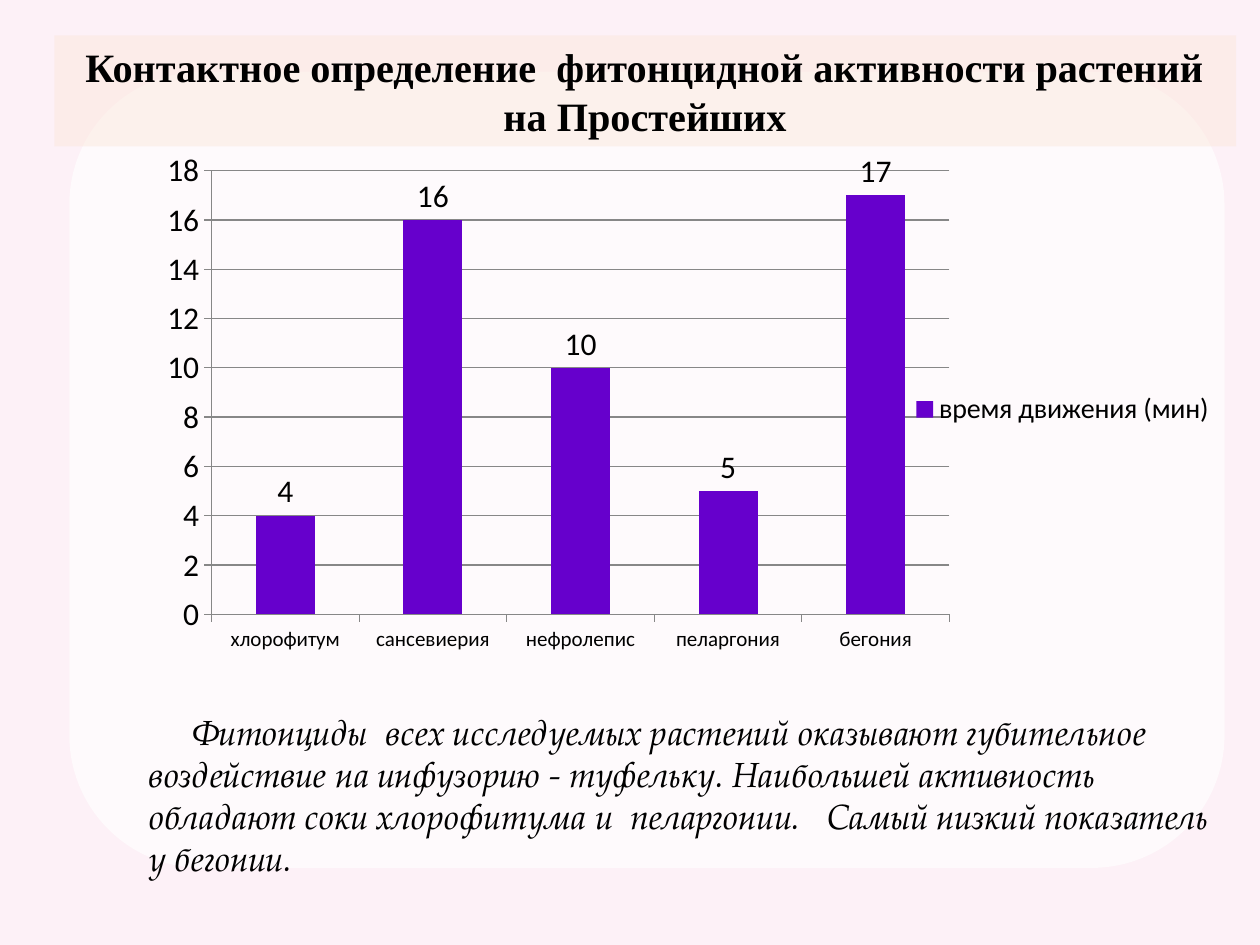
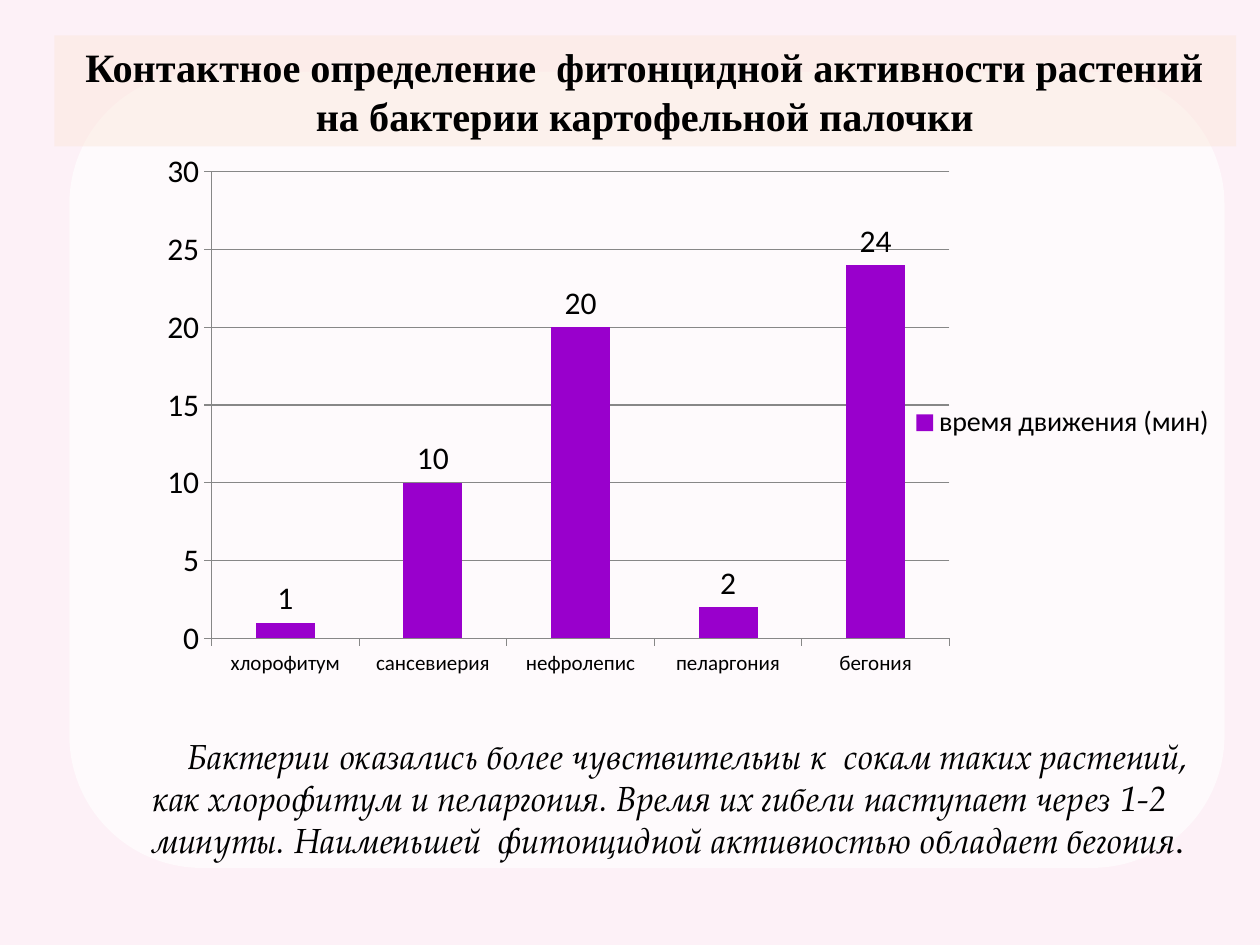
from dataclasses import dataclass

from lxml.etree import SubElement
from pptx import Presentation
from pptx.chart.data import CategoryChartData
from pptx.dml.color import RGBColor
from pptx.enum.chart import (XL_CHART_TYPE, XL_LABEL_POSITION,
                             XL_LEGEND_POSITION, XL_TICK_MARK)
from pptx.enum.shapes import MSO_SHAPE
from pptx.enum.text import MSO_ANCHOR, PP_ALIGN
from pptx.oxml import parse_xml
from pptx.oxml.ns import nsdecls, qn
from pptx.util import Pt


@dataclass(frozen=True)
class Theme:
    # Colours
    background: str = "FDF1F7"
    panel: str = "FFFFFF"
    title_band: str = "FBE5D6"
    ink: str = "000000"
    grid: str = "878787"
    # Fonts
    title_font: str = "Times New Roman"
    chart_font: str = "Calibri"
    conclusion_font: str = "TeX Gyre Pagella"
    # Type sizes
    title_size: int = 23
    conclusion_size: int = 20
    chart_size: int = 18
    legend_size: int = 16
    category_size: int = 12


PLANTS = ("хлорофитум", "сансевиерия", "нефролепис", "пеларгония", "бегония")
MEASURE = "время движения (мин)"
TITLE_START = "Контактное определение  фитонцидной активности растений"
PLOT_AREA = {"x": 0.067, "y": 0.04, "w": 0.677, "h": 0.855}


class Deck:
    def __init__(self, theme):
        self.theme = theme
        self.presentation = Presentation()
        self.presentation.slide_width = Pt(720)
        self.presentation.slide_height = Pt(540)
        self.slide = None

    def style(self, font, name, size, bold=False, italic=False):
        font.name, font.size = name, Pt(size)
        font.bold, font.italic = bold, italic
        font.color.rgb = RGBColor.from_string(self.theme.ink)

    def add_slide(self):
        blank = self.presentation.slide_layouts[6]
        self.slide = self.presentation.slides.add_slide(blank)
        fill = self.slide.background.fill
        fill.solid()
        fill.fore_color.rgb = RGBColor.from_string(self.theme.background)
        self.add_band(MSO_SHAPE.ROUNDED_RECTANGLE, (39.6, 41, 660.2, 455),
                      self.theme.panel, 65)

    def add_band(self, outline, box, colour, opacity):
        band = self.slide.shapes.add_shape(outline, *map(Pt, box))
        band.shadow.inherit = False
        band.line.fill.background()
        band.fill.solid()
        band.fill.fore_color.rgb = RGBColor.from_string(colour)
        tint = band.fill._xPr.find(qn("a:solidFill"))[0]
        SubElement(tint, qn("a:alpha")).set("val", str(opacity * 1000))
        return band

    def add_title(self, ending):
        band = self.add_band(MSO_SHAPE.RECTANGLE, (31, 20.2, 675.4, 63.4),
                             self.theme.title_band, 40)
        frame = band.text_frame
        frame.word_wrap = True
        frame.vertical_anchor = MSO_ANCHOR.MIDDLE
        frame.text = f"{TITLE_START}\n{ending}"
        for line in frame.paragraphs:
            line.alignment = PP_ALIGN.CENTER
            self.style(line.runs[0].font, self.theme.title_font,
                       self.theme.title_size, bold=True)

    def add_chart(self, minutes, colour, height, top_value, step):
        theme = self.theme
        data = CategoryChartData(number_format="General")
        data.categories = PLANTS
        data.add_series(MEASURE, minutes)
        chart = self.slide.shapes.add_chart(
            XL_CHART_TYPE.COLUMN_CLUSTERED,
            Pt(79.2), Pt(85.7), Pt(622.8), Pt(height), data).chart
        chart.has_title = False
        self.style(chart.font, theme.chart_font, theme.chart_size)

        # Columns and their values
        plot = chart.plots[0]
        plot.gap_width = 150
        plot.vary_by_categories = False
        columns = plot.series[0].format.fill
        columns.solid()
        columns.fore_color.rgb = RGBColor.from_string(colour)
        plot.has_data_labels = True
        plot.data_labels.show_value = True
        plot.data_labels.position = XL_LABEL_POSITION.OUTSIDE_END

        # Axes
        scale, names = chart.value_axis, chart.category_axis
        scale.minimum_scale, scale.maximum_scale = 0, top_value
        scale.major_unit = step
        scale.has_major_gridlines = True
        for line in (scale.format.line, names.format.line,
                     scale.major_gridlines.format.line):
            line.color.rgb = RGBColor.from_string(theme.grid)
            line.width = Pt(0.75)
        for axis in (scale, names):
            axis.major_tick_mark = XL_TICK_MARK.OUTSIDE
        self.style(names.tick_labels.font, theme.chart_font, theme.category_size)

        # Legend
        chart.has_legend = True
        chart.legend.position = XL_LEGEND_POSITION.RIGHT
        chart.legend.include_in_layout = False
        self.style(chart.legend.font, theme.chart_font, theme.legend_size)
        self.place_plot(chart)

    def place_plot(self, chart):
        modes = "".join(f'<c:{side}Mode val="edge"/>' for side in "xy")
        sizes = "".join(f'<c:{side} val="{share}"/>'
                        for side, share in PLOT_AREA.items())
        layout = parse_xml(
            f'<c:layout {nsdecls("c")}><c:manualLayout>'
            f'<c:layoutTarget val="inner"/>{modes}{sizes}'
            '</c:manualLayout></c:layout>')
        area = chart._chartSpace.chart.plotArea
        for automatic in area.findall(qn("c:layout")):
            area.remove(automatic)
        area.insert(0, layout)

    def add_conclusion(self, text, box, indent):
        frame = self.slide.shapes.add_textbox(*map(Pt, box)).text_frame
        frame.word_wrap = True
        frame.text = text
        paragraph = frame.paragraphs[0]
        paragraph._p.get_or_add_pPr().set("indent", str(Pt(indent)))
        self.style(paragraph.runs[0].font, self.theme.conclusion_font,
                   self.theme.conclusion_size, italic=True)
        return paragraph

    def add_full_stop(self, paragraph):
        stop = paragraph.add_run()
        stop.text = "."
        self.style(stop.font, self.theme.chart_font, self.theme.conclusion_size)


def main():
    deck = Deck(Theme())

    # Protozoa
    deck.add_slide()
    deck.add_chart((4, 16, 10, 5, 17), "6600CC", 296.6, 18, 2)
    deck.add_title("на Простейших")
    deck.add_conclusion(
        "Фитонциды  всех исследуемых растений оказывают губительное "
        "воздействие на инфузорию - туфельку. Наибольшей активность "
        "обладают соки хлорофитума и  пеларгонии.   Самый низкий "
        "показатель у бегонии.", (77.8, 402.5, 625.7, 104.4), 25)

    # Potato bacillus
    deck.add_slide()
    deck.add_chart((1, 10, 20, 2, 24), "9900CC", 311.8, 30, 5)
    deck.add_title("на бактерии картофельной палочки")
    conclusion = deck.add_conclusion(
        "Бактерии оказались более чувствительны к  сокам таких растений, "
        "как хлорофитум и пеларгония. Время их гибели наступает через 1-2 "
        "минуты. Наименьшей  фитонцидной активностью обладает бегония",
        (79.9, 416.2, 625.7, 79.9), 20)
    deck.add_full_stop(conclusion)

    deck.presentation.save("out.pptx")


if __name__ == "__main__":
    main()
